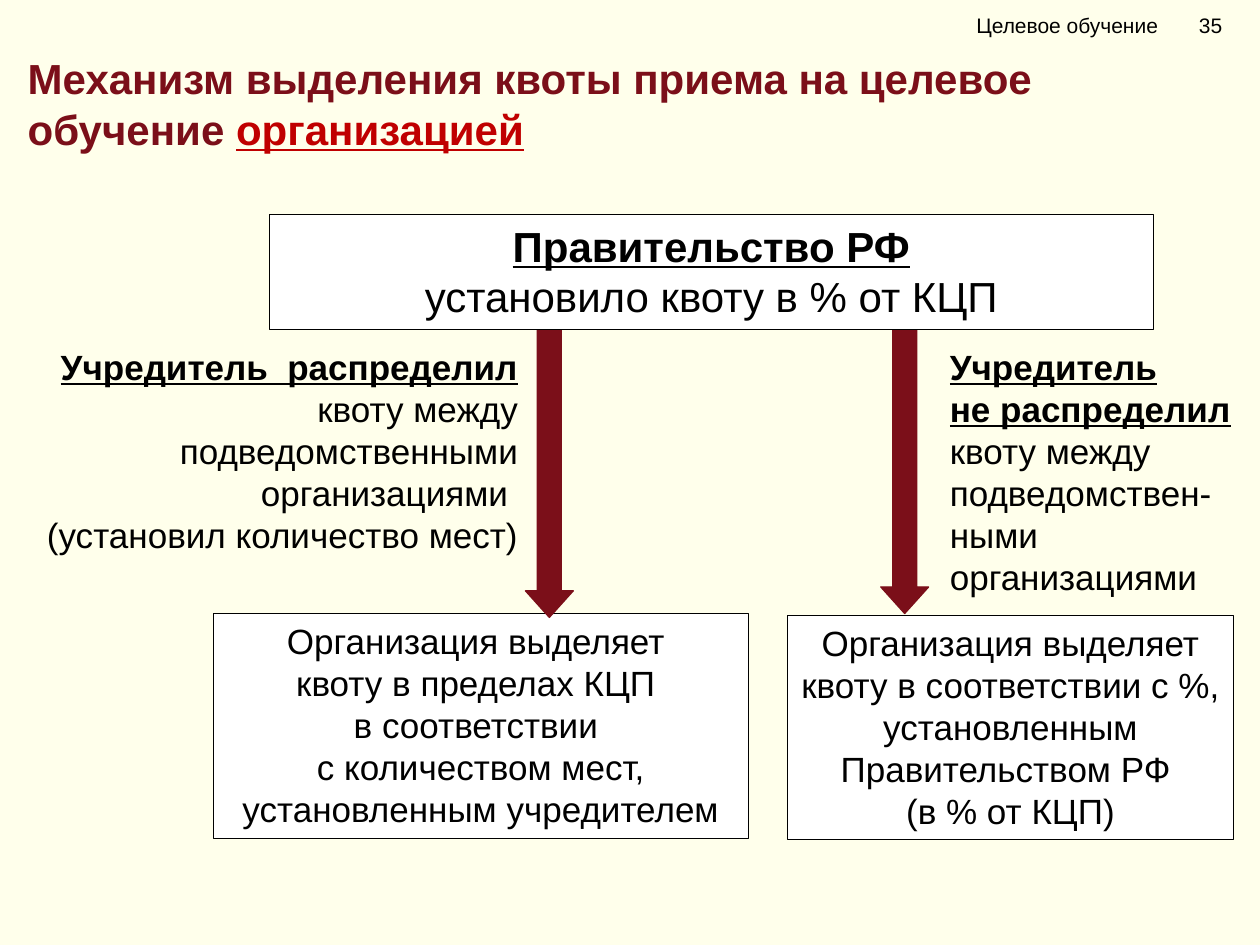
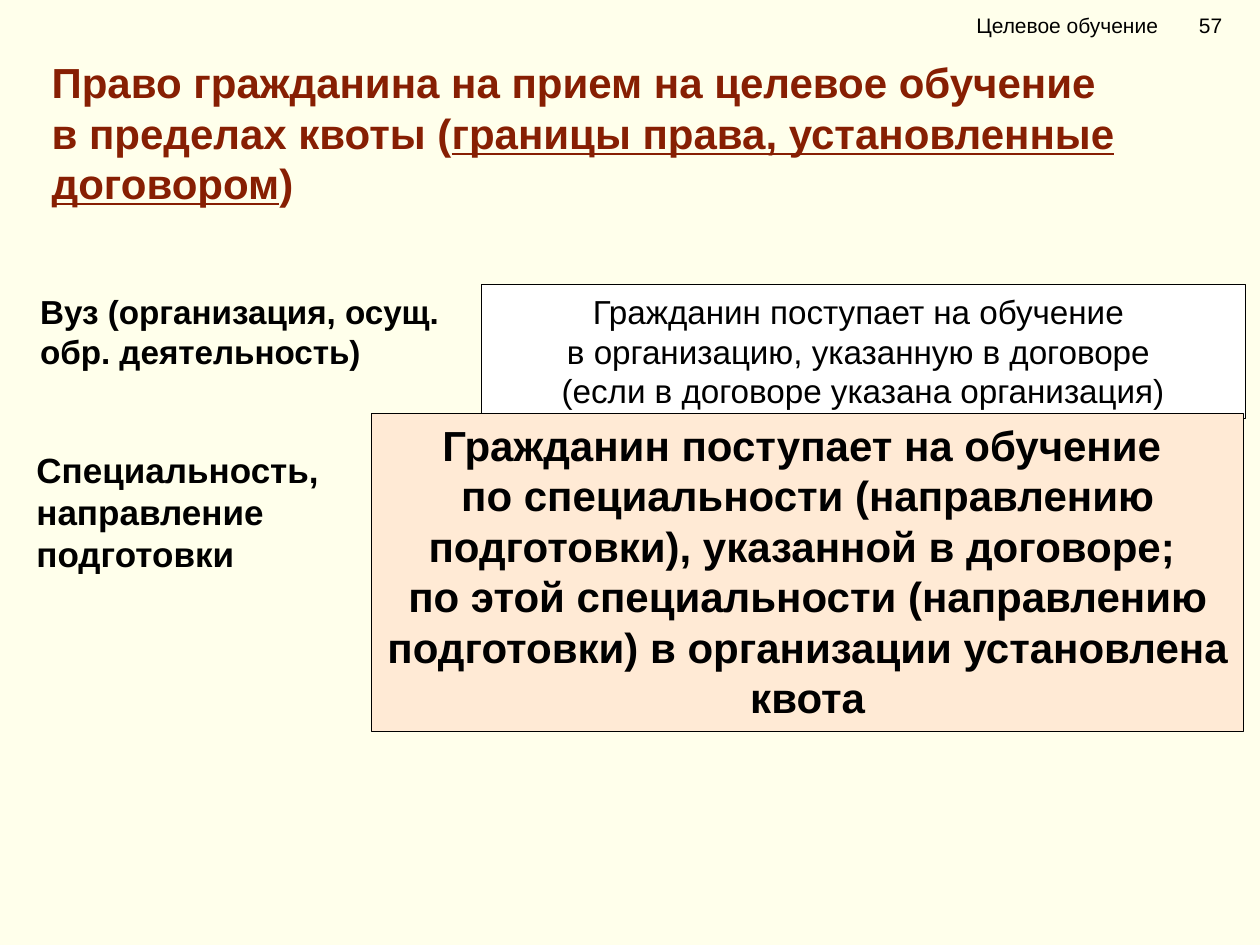
from pptx import Presentation
from pptx.dml.color import RGBColor
from pptx.enum import shapes, text
from pptx.util import Inches, Pt

COLORS = {
    "background": "FFFFEB",
    "maroon": "7B0F19",
    "red": "C00000",
    "brown": "871F03",
    "ink": "000000",
    "white": "FFFFFF",
    "peach": "FFEAD5",
}
FONT = "Arial"
TITLE_SIZE = 24
TITLE_ONLY = 5
LEFT, CENTER, RIGHT = text.PP_ALIGN.LEFT, text.PP_ALIGN.CENTER, text.PP_ALIGN.RIGHT


def rgb(name):
    """Return the palette colour with the given name."""
    return RGBColor.from_string(COLORS[name])


def write(frame, paras, size, align=LEFT, color="ink", anchor=text.MSO_ANCHOR.TOP):
    """Fill a frame; each paragraph is a list of (text, style[, colour]) spans."""
    frame.word_wrap = True
    frame.auto_size = text.MSO_AUTO_SIZE.NONE
    frame.vertical_anchor = anchor
    for index, spans in enumerate(paras):
        para = frame.paragraphs[0] if index == 0 else frame.add_paragraph()
        para.alignment = align
        for words, style, *own_color in spans:
            start = len(para.runs)
            para.add_line_break() if words == "\v" else None
            if words == "\v":
                continue
            span = para.add_run()
            span.text = words
            font = para.runs[start].font
            font.name, font.size = FONT, Pt(size)
            font.bold, font.underline = "b" in style, "u" in style
            font.color.rgb = rgb(own_color[0] if own_color else color)


def plain(*lines, style=""):
    """Turn lines into paragraphs of one span each."""
    return [[(line, style)] for line in lines]


def add_label(page, box, paras, size, **options):
    """Add free text in the given box."""
    label = page.shapes.add_textbox(*map(Inches, box))
    write(label.text_frame, paras, size, **options)


def add_filled(page, kind, box, fill, line, width):
    """Add a filled, outlined preset shape without a shadow."""
    shape = page.shapes.add_shape(kind, *map(Inches, box))
    shape.shadow.inherit = False
    shape.fill.solid()
    shape.fill.fore_color.rgb = rgb(fill)
    shape.line.color.rgb = rgb(line)
    shape.line.width = Pt(width)
    return shape


def add_panel(page, box, paras, size, fill="white"):
    """Add a bordered rectangle with centred text."""
    panel = add_filled(page, shapes.MSO_SHAPE.RECTANGLE, box, fill, "ink", 0.25)
    write(panel.text_frame, paras, size, align=CENTER)


def add_down_arrow(page, center, top, height):
    """Add a maroon block arrow centred on a vertical axis."""
    width = 0.38
    box = (center - width / 2, top, width, height)
    arrow = add_filled(page, shapes.MSO_SHAPE.DOWN_ARROW, box, "maroon", "maroon", 0.75)
    arrow.adjustments[0], arrow.adjustments[1] = 0.5, 0.555


def add_page(deck, number, title_box, title, title_color):
    """Add a slide with its title and the running header."""
    page = deck.slides.add_slide(deck.slide_layouts[TITLE_ONLY])
    heading = page.shapes.title
    heading.left, heading.top, heading.width, heading.height = map(Inches, title_box)
    write(heading.text_frame, title, TITLE_SIZE, color=title_color)
    middle = text.MSO_ANCHOR.MIDDLE
    add_label(page, (7.65, 0, 1.65, 0.4), plain("Целевое обучение"), 12, anchor=middle)
    add_label(page, (9.3, 0, 0.5, 0.4), plain(str(number)), 12, align=RIGHT, anchor=middle)
    return page


def build_quota_page(deck):
    """Show how an organisation allots its quota."""
    title = [[("Механизм выделения квоты приема на целевое", "b"), ("\v", ""),
              ("обучение ", "b"), ("организацией", "bu", "red")]]
    page = add_page(deck, 35, (0.12, 0.37, 9.88, 0.9), title, "maroon")
    add_label(page, (0.07, 2.69, 4.14, 1.78), [
        [("Учредитель  распределил ", "bu"),
         ("квоту между подведомственными организациями ", "")],
        [("(установил количество мест)", "")],
    ], 20, align=RIGHT)
    add_label(page, (7.44, 2.69, 2.56, 2.12), [
        [("Учредитель", "bu"), (" ", "")],
        [("не распределил ", "bu"), ("квоту между подведомствен-ными организациями", "")],
    ], 20)
    add_panel(page, (1.69, 4.87, 4.25, 1.78), plain(
        "Организация выделяет ", "квоту в пределах КЦП ", "в соответствии ",
        "с количеством мест, установленным учредителем"), 20)
    add_panel(page, (6.25, 4.88, 3.54, 1.78), plain(
        "Организация выделяет квоту в соответствии с %, установленным Правительством РФ ",
        "(в % от КЦП)"), 20)
    add_down_arrow(page, 4.36, 2.61, 2.29)
    add_down_arrow(page, 7.18, 2.61, 2.26)
    add_panel(page, (2.14, 1.7, 7.01, 0.91), [
        [("Правительство РФ", "bu")],
        [("установило квоту в % от КЦП", "")],
    ], 24)


def build_rights_page(deck):
    """Show the limits that the contract sets on admission."""
    title = [
        [("Право гражданина на прием на целевое обучение", "b")],
        [("в пределах квоты (", "b"),
         ("границы права, установленные договором", "bu"), (")", "b")],
    ]
    page = add_page(deck, 57, (0.31, 0.4, 9.42, 1.31), title, "brown")
    add_label(page, (0.22, 2.26, 3.75, 0.74),
              plain("Вуз (организация, осущ. обр. деятельность)", style="b"), 19)
    add_label(page, (0.19, 3.51, 2.45, 1.11),
              plain("Специальность, направление подготовки", style="b"), 20)
    add_panel(page, (3.82, 2.26, 6.06, 1.06), plain(
        "Гражданин поступает на обучение ", "в организацию, указанную в договоре ",
        "(если в договоре указана организация)"), 19)
    add_panel(page, (2.95, 3.28, 6.92, 2.52), plain(
        "Гражданин поступает на обучение ",
        "по специальности (направлению подготовки), указанной в договоре; ",
        "по этой специальности (направлению подготовки) в организации установлена квота",
        style="b"), 24, fill="peach")


def main():
    """Build and save the deck."""
    deck = Presentation()
    deck.slide_width, deck.slide_height = Inches(10), Inches(7.5)
    backdrop = deck.slide_master.background.fill
    backdrop.solid()
    backdrop.fore_color.rgb = rgb("background")
    build_quota_page(deck)
    build_rights_page(deck)
    deck.save("out.pptx")


if __name__ == "__main__":
    main()
